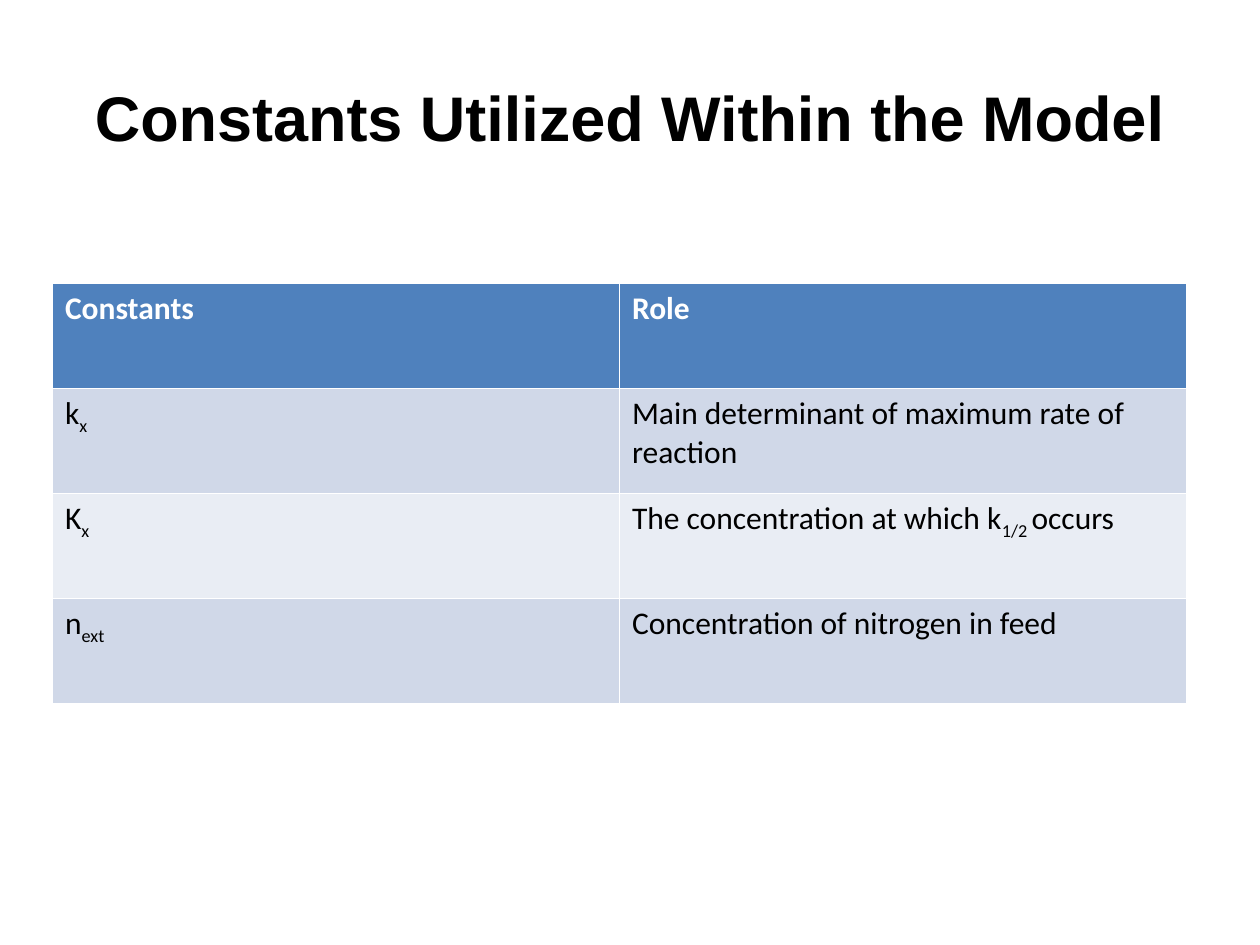
import dataclasses

import pptx
import pptx.dml.color
import pptx.enum.text
import pptx.util

Pt = pptx.util.Pt
Color = pptx.dml.color.RGBColor


@dataclasses.dataclass(frozen=True)
class Theme:
    title_font: str = "Arial"
    table_font: str = "Calibri"
    title_size: int = 36
    table_size: int = 18
    ink: Color = Color(0x00, 0x00, 0x00)
    header_ink: Color = Color(0xFF, 0xFF, 0xFF)
    header_fill: Color = Color(0x4F, 0x81, 0xBD)
    band_fills: tuple[Color, Color] = (
        Color(0xD0, 0xD8, 0xE8),
        Color(0xE9, 0xED, 0xF4),
    )


@dataclasses.dataclass(frozen=True)
class Piece:
    text: str
    subscript: bool = False


@dataclasses.dataclass(frozen=True)
class Constant:
    symbol: tuple[Piece, ...]
    role: tuple[Piece, ...]


THEME = Theme()
HEADER = Constant((Piece("Constants"),), (Piece("Role"),))
CONSTANTS = (
    Constant(
        (Piece("k"), Piece("x", True)),
        (Piece("Main determinant of maximum rate of reaction"),),
    ),
    Constant(
        (Piece("K"), Piece("x", True)),
        (Piece("The concentration at which k"), Piece("1/2 ", True), Piece("occurs")),
    ),
    Constant(
        (Piece("n"), Piece("ext", True)),
        (Piece("Concentration of nitrogen in feed"),),
    ),
)
COLUMN_WIDTH = 324
ROW_HEIGHT = 60


def format_font(font, name: str, size: int, color: Color, bold: bool) -> None:
    font.name = name
    font.size = Pt(size)
    font.color.rgb = color
    font.bold = bold


def add_title(slide, text: str) -> None:
    title = slide.shapes.title
    title.left, title.top, title.width, title.height = Pt(36), Pt(21.6), Pt(648), Pt(90)
    frame = title.text_frame
    frame.text = text
    frame.vertical_anchor = pptx.enum.text.MSO_ANCHOR.MIDDLE
    para = frame.paragraphs[0]
    para.alignment = pptx.enum.text.PP_ALIGN.CENTER
    format_font(para.runs[0].font, THEME.title_font, THEME.title_size, THEME.ink, True)


def fill_cell(cell, pieces: tuple[Piece, ...], fill: Color, header: bool) -> None:
    cell.fill.solid()
    cell.fill.fore_color.rgb = fill
    para = cell.text_frame.paragraphs[0]
    ink = THEME.header_ink if header else THEME.ink
    for piece in pieces:
        span = para.add_run()
        span.text = piece.text
        format_font(span.font, THEME.table_font, THEME.table_size, ink, header)
        if piece.subscript:
            span.font._element.set("baseline", "-25000")


def add_constants_table(slide) -> None:
    rows = (HEADER, *CONSTANTS)
    table = slide.shapes.add_table(
        len(rows), 2, Pt(30), Pt(162), Pt(2 * COLUMN_WIDTH), Pt(len(rows) * ROW_HEIGHT)
    ).table
    for index, constant in enumerate(rows):
        header = index == 0
        fill = THEME.header_fill if header else THEME.band_fills[(index - 1) % 2]
        for column, pieces in enumerate((constant.symbol, constant.role)):
            fill_cell(table.cell(index, column), pieces, fill, header)


def main() -> None:
    deck = pptx.Presentation()
    deck.slide_width, deck.slide_height = Pt(720), Pt(540)
    page = deck.slides.add_slide(deck.slide_layouts.get_by_name("Title Only"))
    add_title(page, "Constants Utilized Within the Model")
    add_constants_table(page)
    deck.save("out.pptx")


if __name__ == "__main__":
    main()
